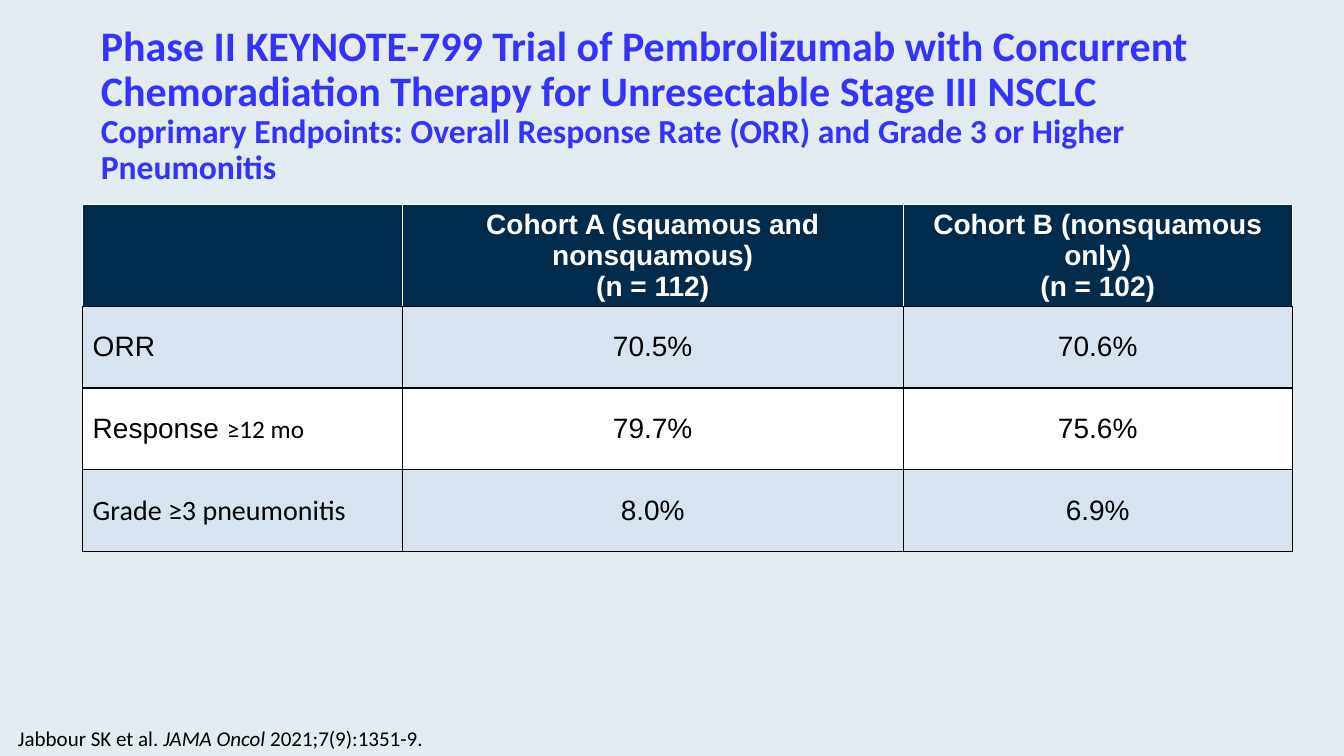
from copy import deepcopy

from lxml.etree import SubElement
from pptx import Presentation
from pptx.dml.color import RGBColor
from pptx.enum.text import MSO_ANCHOR as Anchor, MSO_AUTO_SIZE as AutoSize, PP_ALIGN as Align
from pptx.oxml.ns import qn
from pptx.util import Inches, Pt

BACKGROUND = RGBColor(0xE2, 0xEC, 0xF1)
TITLE_BLUE = RGBColor(0x33, 0x33, 0xFF)
NAVY = RGBColor(0x01, 0x2B, 0x4D)
PALE_BLUE = RGBColor(0xD7, 0xE4, 0xEF)
WHITE = RGBColor(0xFF, 0xFF, 0xFF)
BLACK = RGBColor(0, 0, 0)

HEADERS = [
    [],
    ["Cohort A (squamous and nonsquamous)", "(n = 112)"],
    ["Cohort B (nonsquamous only)", "(n = 102)"],
]
RESULTS = [
    ([("ORR", {})], "70.5%", "70.6%"),
    ([("Response ", {}), ("≥12 mo", dict(size=18, font="Calibri"))], "79.7%", "75.6%"),
    ([("Grade ≥3 pneumonitis", dict(font="Calibri"))], "8.0%", "6.9%"),
]


def add_text(p, text, size=20, font="Arial", color=BLACK, bold=False, italic=False):
    r = p.add_run()
    r.text = text
    r.font.size = Pt(size)
    r.font.name = font
    r.font.color.rgb = color
    r.font.bold = bold
    r.font.italic = italic
    return r


def add_border(cell, sides, color):
    tc_pr = cell._tc.get_or_add_tcPr()
    for side in sides:
        ln = SubElement(tc_pr, qn(f"a:ln{side}"), w=str(Pt(1)))
        fill = SubElement(ln, qn("a:solidFill"))
        SubElement(fill, qn("a:srgbClr"), val=str(color))


class Deck:
    def __init__(self):
        self.prs = Presentation()
        self.prs.slide_width = Inches(13.33)
        self.prs.slide_height = Inches(7.5)
        self.s = self.prs.slides.add_slide(self.prs.slide_layouts[5])
        self.s.background.fill.solid()
        self.s.background.fill.fore_color.rgb = BACKGROUND

    def x(self, percent):
        return round(self.prs.slide_width * percent / 100)

    def y(self, percent):
        return round(self.prs.slide_height * percent / 100)

    def box(self, left, top, width, height):
        return self.x(left), self.y(top), self.x(width), self.y(height)

    def title(self, heading, subheading, box):
        sp = self.s.shapes.title
        sp.left, sp.top, sp.width, sp.height = self.box(*box)
        tf = sp.text_frame
        tf.word_wrap = True
        tf.auto_size = AutoSize.NONE
        tf.vertical_anchor = Anchor.MIDDLE
        tf.margin_left = tf.margin_top = tf.margin_right = tf.margin_bottom = 0
        p = tf.paragraphs[0]
        p.alignment = Align.LEFT
        p.line_spacing = 0.88
        style = dict(font="Calibri", color=TITLE_BLUE, bold=True)
        r = add_text(p, heading, size=30, **style)
        p.add_line_break()
        p._p[-1].append(deepcopy(r._r.rPr))
        add_text(p, subheading, size=24, **style)

    def cell(self, cell, paragraphs, fill, anchor, align, edge, **style):
        add_border(cell, "LRT", edge)
        add_border(cell, "B", BLACK)
        cell.fill.solid()
        cell.fill.fore_color.rgb = fill
        cell.vertical_anchor = anchor
        cell.margin_top = cell.margin_bottom = Inches(0.04)
        tf = cell.text_frame
        for i, runs in enumerate(paragraphs):
            p = tf.add_paragraph() if i else tf.paragraphs[0]
            p.alignment = align
            for text, changes in runs:
                add_text(p, text, **{**style, **changes})

    def table(self, headers, results, left, top, widths, heights):
        box = self.box(left, top, sum(widths), sum(heights))
        table = self.s.shapes.add_table(len(heights), len(widths), *box).table
        table.first_row = table.horz_banding = False
        for column, width in zip(table.columns, widths):
            column.width = self.x(width)
        for row, height in zip(table.rows, heights):
            row.height = self.y(height)
        for c, lines in enumerate(headers):
            self.cell(table.cell(0, c), [[(line, {})] for line in lines], NAVY,
                      Anchor.BOTTOM, Align.CENTER, WHITE, color=WHITE, bold=True)
        for i, (label, *values) in enumerate(results, 1):
            fill = PALE_BLUE if i % 2 else WHITE
            self.cell(table.cell(i, 0), [label], fill, Anchor.MIDDLE, Align.LEFT, BLACK)
            for c, value in enumerate(values, 1):
                self.cell(table.cell(i, c), [[(value, {})]], fill,
                          Anchor.MIDDLE, Align.CENTER, BLACK)

    def citation(self, runs, box):
        tf = self.s.shapes.add_textbox(*self.box(*box)).text_frame
        tf.word_wrap = True
        tf.auto_size = AutoSize.SHAPE_TO_FIT_TEXT
        for text, italic in runs:
            add_text(tf.paragraphs[0], text, size=15, font="Calibri", italic=italic)


def main():
    deck = Deck()
    deck.title(
        "Phase II KEYNOTE-799 Trial of Pembrolizumab with Concurrent "
        "Chemoradiation Therapy for Unresectable Stage III NSCLC",
        "Coprimary Endpoints: Overall Response Rate (ORR) and Grade 3 or Higher Pneumonitis",
        (7.5, 3.33, 85, 21.47),
    )
    deck.table(HEADERS, RESULTS, 6.15, 27.07,
               [23.78, 37.28, 28.95], [11.73] + [10.8] * len(RESULTS))
    deck.citation(
        [("Jabbour SK et al. ", False), ("JAMA Oncol", True), (" 2021;7(9):1351-9.", False)],
        (0.6, 95.33, 90.92, 4.67),
    )
    deck.prs.save("out.pptx")


if __name__ == "__main__":
    main()
